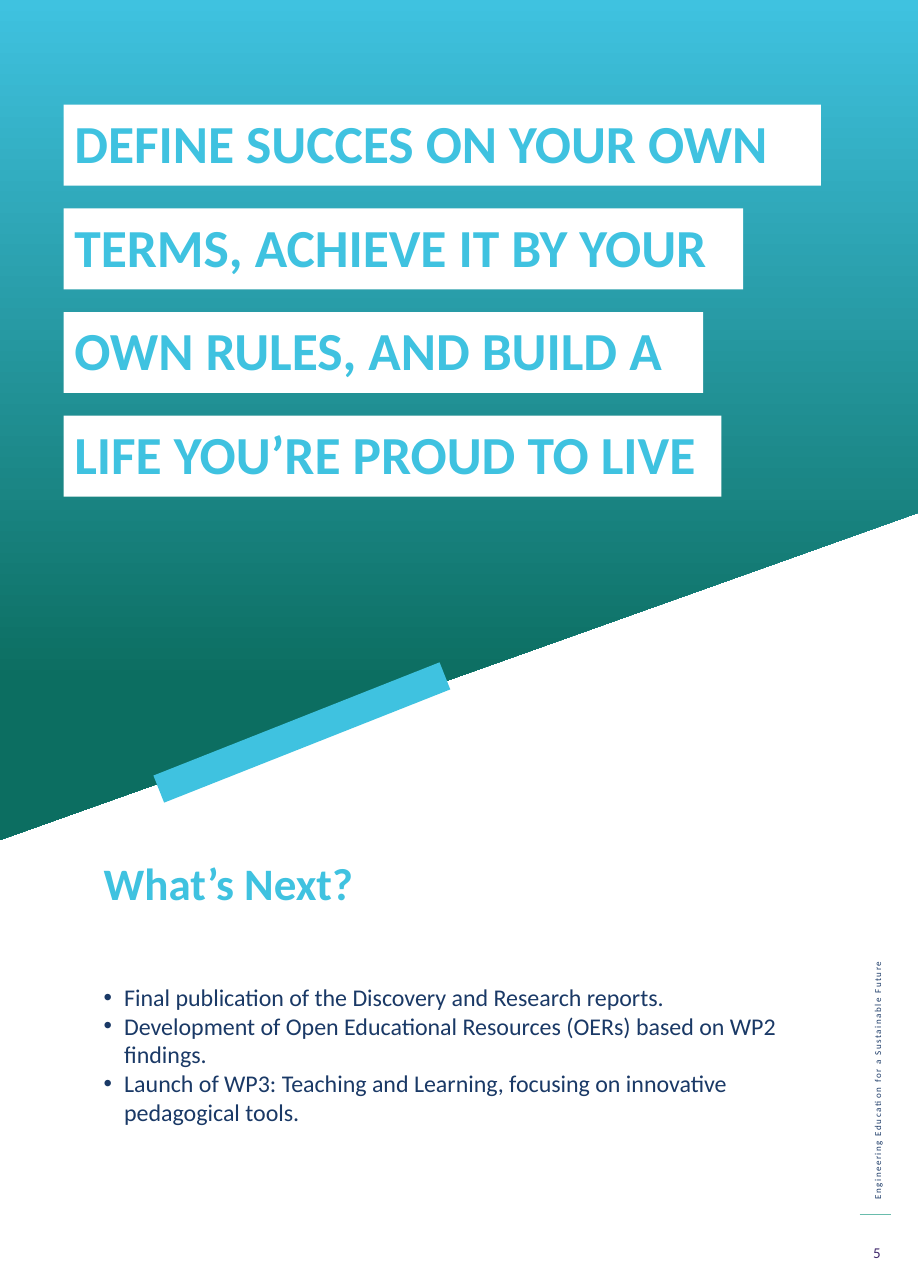
import pptx
import pptx.dml.color
import pptx.enum.shapes
import pptx.enum.text
import pptx.oxml.ns
import pptx.util
import lxml.etree

Inches = pptx.util.Inches
Pt = pptx.util.Pt
Align = pptx.enum.text.PP_ALIGN
Anchor = pptx.enum.text.MSO_ANCHOR
qn = pptx.oxml.ns.qn

COLORS = {
    "sky": "3FC2E0",
    "forest": "0C6E61",
    "mint": "69BCAC",
    "navy": "1A3966",
    "violet": "41296C",
    "white": "FFFFFF",
}


def rgb(name):
    return pptx.dml.color.RGBColor.from_string(COLORS[name])


class QuotePage:
    font = "Calibri"

    def __init__(self, presentation):
        self.slide = presentation.slides.add_slide(presentation.slide_layouts[1])
        self.shapes = self.slide.shapes

    def place(self, shape, box):
        shape.left, shape.top, shape.width, shape.height = map(Inches, box)

    def set_text(self, shape, lines, size, color, bold=False, align=Align.LEFT,
                 anchor=Anchor.TOP, line_spacing=1.0, tracking=None):
        frame = shape.text_frame
        frame.text = "\n".join(lines)
        frame.word_wrap = True
        frame.auto_size = pptx.enum.text.MSO_AUTO_SIZE.NONE
        frame.vertical_anchor = anchor
        for paragraph in frame.paragraphs:
            paragraph.alignment = align
            paragraph.line_spacing = line_spacing
            paragraph.space_before = Pt(0)
            for run in paragraph.runs:
                run.font.name = self.font
                run.font.size = Pt(size)
                run.font.bold = bold
                run.font.color.rgb = rgb(color)
                if tracking:
                    run._r.get_or_add_rPr().set("spc", str(int(tracking * 100)))

    def heading(self, text, box):
        title = self.shapes.title
        self.place(title, box)
        self.set_text(title, [text], 30, "sky", bold=True, line_spacing=0.9)

    def bullets(self, items, box, indent):
        body = self.slide.placeholders[1]
        self.place(body, box)
        self.set_text(body, items, 16, "navy")
        for paragraph in body.text_frame.paragraphs:
            properties = paragraph._p.get_or_add_pPr()
            properties.set("marL", str(Inches(indent)))
            properties.set("indent", str(-Inches(indent)))
            lxml.etree.SubElement(properties, qn("a:buChar")).set("char", "•")

    def label(self, text, box, size, color, rotation=0, **style):
        label = self.shapes.add_textbox(*map(Inches, box))
        label.rotation = rotation
        self.set_text(label, [text], size, color, **style)

    def rectangle(self, box, color, rotation=0):
        rectangle = self.shapes.add_shape(
            pptx.enum.shapes.MSO_SHAPE.RECTANGLE, *map(Inches, box))
        rectangle.rotation = rotation
        rectangle.shadow.inherit = False
        rectangle.fill.solid()
        rectangle.fill.fore_color.rgb = rgb(color)
        rectangle.line.fill.background()
        return rectangle

    def banner(self, text, box):
        self.set_text(self.rectangle(box, "white"), [text], 35.7, "sky", bold=True,
                      anchor=Anchor.MIDDLE, line_spacing=Pt(38.8))

    def gradient_panel(self, corners, stops):
        """Draw a polygon shaded from top to bottom; stops are (position, colour)."""
        points = [(Inches(x), Inches(y)) for x, y in corners]
        builder = self.shapes.build_freeform(*points[0], scale=1.0)
        builder.add_line_segments(points[1:], close=True)
        panel = builder.convert_to_shape()
        panel.shadow.inherit = False
        panel.line.fill.background()
        panel.fill.gradient()
        panel.fill.gradient_angle = 270
        for stop, (position, color) in zip(panel.fill.gradient_stops, stops):
            stop.position = position
            stop.color.rgb = rgb(color)

    def rule(self, start, end, color, width):
        rule = self.shapes.add_connector(
            pptx.enum.shapes.MSO_CONNECTOR.STRAIGHT, *map(Inches, start + end))
        rule.line.color.rgb = rgb(color)
        rule.line.width = Pt(width)
        lxml.etree.SubElement(rule._element.spPr, qn("a:effectLst"))


def main():
    presentation = pptx.Presentation()
    presentation.slide_width = Inches(8.5)
    presentation.slide_height = Inches(11.93)
    page = QuotePage(presentation)

    page.label("Engineering Education for a Sustainable Future",
               (5.88, 8.86, 4.49, 0.2), 6, "navy", rotation=270, tracking=1)
    page.rule((7.96, 11.25), (8.25, 11.25), "mint", 0.5)
    page.gradient_panel([(0, 0), (0, 7.78), (8.5, 4.75), (8.5, 0)],
                        [(0, "sky"), (0.81, "forest")])
    page.rectangle((2.66, 5.36, 0.27, 2.85), "sky", rotation=68.4)

    quote = [
        ("DEFINE SUCCES ON YOUR OWN", 7.01),
        ("TERMS, ACHIEVE IT BY YOUR", 6.29),
        ("OWN RULES, AND BUILD A", 5.92),
        ("LIFE YOU’RE PROUD TO LIVE", 6.09),
    ]
    for row, (words, width) in enumerate(quote):
        page.banner(words, (0.59, 0.97 + row * 0.96, width, 0.75))

    page.heading("What’s Next?", (0.86, 7.93, 4.25, 0.56))
    page.bullets([
        "Final publication of the Discovery and Research reports.",
        "Development of Open Educational Resources (OERs) based on WP2 findings.",
        "Launch of WP3: Teaching and Learning, focusing on innovative "
        "pedagogical tools.",
    ], (0.86, 9.05, 6.73, 0.95), indent=0.19)
    page.label("5", (7.91, 11.4, 0.42, 0.41), 10, "violet",
               align=Align.CENTER, anchor=Anchor.MIDDLE)

    presentation.save("out.pptx")


if __name__ == "__main__":
    main()
